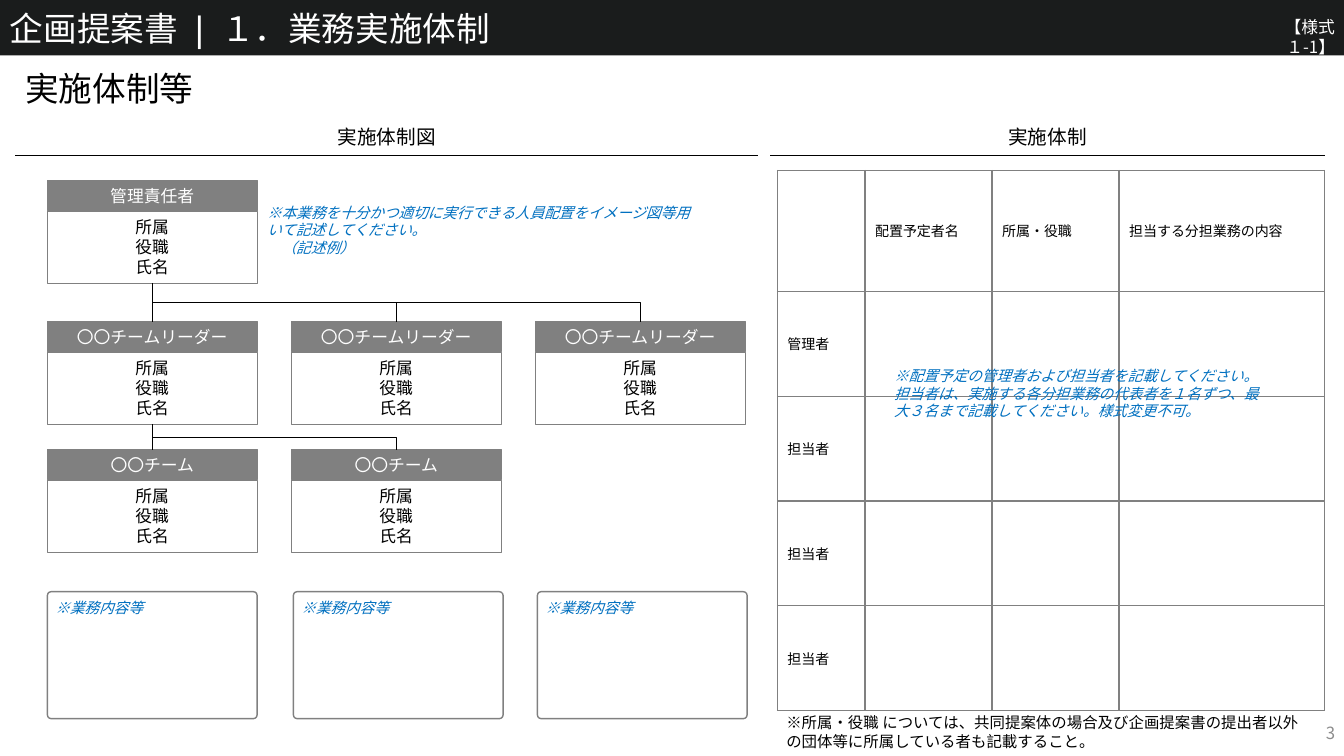
"""Build the project team structure slide of a proposal."""
import pptx
import pptx.util
import pptx.dml.color
import pptx.enum.shapes
import pptx.enum.text
import pptx.oxml.ns
from lxml import etree

Inches, Pt = pptx.util.Inches, pptx.util.Pt
SHAPE = pptx.enum.shapes.MSO_SHAPE
CONNECTOR = pptx.enum.shapes.MSO_CONNECTOR
ALIGN = pptx.enum.text.PP_ALIGN
ANCHOR = pptx.enum.text.MSO_ANCHOR
qn = pptx.oxml.ns.qn

FONT = "Noto Sans CJK JP"
BLACK, WHITE, GRAY, BLUE = "000000", "FFFFFF", "808080", "0070C0"
GUIDE = dict(size=10.5, color=BLUE, italic=True)

BANNER = "企画提案書 ❘ １．業務実施体制"
TITLE = "実施体制等"
FORM_NO = "【様式１-1】"
PAGE_NO = "3"
SECTIONS = [("実施体制図", 0.15, 7.37), ("実施体制", 7.64, 5.5)]
MEMBER = ["所属", "役職", "氏名"]
TEAM_ROWS = [
    (1.79, ["管理責任者"]),
    (3.19, ["〇〇チームリーダー"] * 3),
    (4.46, ["〇〇チーム"] * 2),
]
TASK = "※業務内容等"
TASK_LEFTS = [0.47, 2.91, 5.33]
CHART_GUIDE = ["※本業務を十分かつ適切に実行できる人員配置をイメージ図等用いて記述してください。",
               "　（記述例）"]
TABLE_GUIDE = "※配置予定の管理者および担当者を記載してください。担当者は、実施する各分担業務の代表者を１名ずつ、最大３名まで記載してください。様式変更不可。"
FOOTNOTE = "※所属・役職 については、共同提案体の場合及び企画提案書の提出者以外の団体等に所属している者も記載すること。"
HEADINGS = ["", "配置予定者名", "所属・役職", "担当する分担業務の内容"]
ROLES = ["管理者", "担当者", "担当者", "担当者"]
COL_WIDTHS = [0.87, 1.26, 1.26, 2.04]
ROW_HEIGHTS = [1.2] + [1.04] * 4

CARD_LEFT, CARD_STEP, CARD_W = 0.47, 2.42, 2.08
HEAD_H, BODY_DROP, BODY_H = 0.3, 0.31, 0.71


def rgb(value):
    return pptx.dml.color.RGBColor.from_string(value)


def write(tf, text, size=12, color=BLACK, italic=False, align=ALIGN.LEFT, anchor=ANCHOR.TOP):
    tf.word_wrap = True
    tf.vertical_anchor = anchor
    lines = [text] if isinstance(text, str) else text
    for i, line in enumerate(lines):
        p = tf.paragraphs[0] if i == 0 else tf.add_paragraph()
        p.alignment = align
        r = p.add_run()
        r.text = line
        r.font.size, r.font.italic = Pt(size), italic
        r.font.color.rgb = rgb(color)
        r.font.name = FONT
        etree.SubElement(r.font._element, qn("a:ea"), typeface=FONT)


def add_text(s, text, x, y, w, h, **fmt):
    write(s.shapes.add_textbox(Inches(x), Inches(y), Inches(w), Inches(h)).text_frame, text, **fmt)


def add_box(s, x, y, w, h, fill=None, line=None, width=0.75, kind=SHAPE.RECTANGLE):
    sp = s.shapes.add_shape(kind, Inches(x), Inches(y), Inches(w), Inches(h))
    sp.shadow.inherit = False
    if fill:
        sp.fill.solid()
        sp.fill.fore_color.rgb = rgb(fill)
    else:
        sp.fill.background()
    if line:
        sp.line.color.rgb = rgb(line)
        sp.line.width = Pt(width)
    else:
        sp.line.fill.background()
    return sp


def add_line(s, x1, y1, x2, y2, kind=CONNECTOR.STRAIGHT):
    cxn = s.shapes.add_connector(kind, x1, y1, x2, y2)
    cxn.line.color.rgb = rgb(BLACK)
    cxn.line.width = Pt(0.5)
    etree.SubElement(cxn._element.spPr, qn("a:effectLst"))
    return cxn


def join(s, parent, child):
    x1, y1 = parent.left + parent.width // 2, parent.top + parent.height
    x2, y2 = child.left + child.width // 2, child.top
    run, drop = x2 - x1, y2 - y1
    cxn = add_line(s, x1, y1, x2, y2, CONNECTOR.ELBOW if run else CONNECTOR.STRAIGHT)
    cxn.begin_connect(parent, 2)
    cxn.end_connect(child, 0)
    if run:
        cxn.left, cxn.top = x1 + (run - drop) // 2, y1 + (drop - run) // 2
        cxn.width, cxn.height = drop, run
        xfrm = cxn._element.spPr.find(qn("a:xfrm"))
        xfrm.set("rot", "16200000")
        xfrm.set("flipH", "1")


def add_card(s, heading, x, y):
    head = add_box(s, x, y, CARD_W, HEAD_H, GRAY, GRAY)
    write(head.text_frame, heading, color=WHITE, align=ALIGN.CENTER, anchor=ANCHOR.MIDDLE)
    body = add_box(s, x, y + BODY_DROP, CARD_W, BODY_H, line=GRAY)
    write(body.text_frame, MEMBER, align=ALIGN.CENTER)
    return head, body


def add_staff_table(s):
    rows = [HEADINGS] + [[role, "", "", ""] for role in ROLES]
    table = s.shapes.add_table(len(rows), len(HEADINGS), Inches(7.71), Inches(1.69),
                               Inches(sum(COL_WIDTHS)), Inches(sum(ROW_HEIGHTS))).table
    table.first_row = table.horz_banding = False
    for col, w in zip(table.columns, COL_WIDTHS):
        col.width = Inches(w)
    for row, h, texts in zip(table.rows, ROW_HEIGHTS, rows):
        row.height = Inches(h)
        for cell, text in zip(row.cells, texts):
            cell.vertical_anchor = ANCHOR.MIDDLE
            tcPr = cell._tc.get_or_add_tcPr()
            for side in ("a:lnL", "a:lnR", "a:lnT", "a:lnB"):
                ln = etree.SubElement(tcPr, qn(side), w=str(Pt(1)))
                fill = etree.SubElement(ln, qn("a:solidFill"))
                etree.SubElement(fill, qn("a:srgbClr"), val=GRAY)
            cell.fill.solid()
            cell.fill.fore_color.rgb = rgb(WHITE)
            if text:
                write(cell.text_frame, text, size=10, anchor=ANCHOR.MIDDLE)


def main():
    prs = pptx.Presentation()
    prs.slide_width, prs.slide_height = Inches(13.33), Inches(7.5)
    s = prs.slides.add_slide(prs.slide_layouts[5])

    title = s.shapes.title
    title.left, title.top = Inches(0.15), Inches(0.62)
    title.width, title.height = Inches(13.18), Inches(0.5)
    write(title.text_frame, TITLE, size=24)

    add_staff_table(s)
    banner = add_box(s, 0, 0, 13.33, 0.55, "1A1C1C")
    write(banner.text_frame, BANNER, size=24, color=WHITE, anchor=ANCHOR.MIDDLE)
    add_text(s, PAGE_NO, 10.9, 7.07, 2.44, 0.4, color="8C8C8C", align=ALIGN.RIGHT,
             anchor=ANCHOR.MIDDLE)
    add_text(s, FORM_NO, 12.28, 0.12, 1.06, 0.3, color=WHITE, align=ALIGN.RIGHT)

    for heading, x, w in SECTIONS:
        add_text(s, heading, x, 1.19, w, 0.34, size=14, align=ALIGN.CENTER)
        add_line(s, Inches(x), Inches(1.54), Inches(x + w), Inches(1.54))

    parent = None
    for y, headings in TEAM_ROWS:
        cards = [add_card(s, heading, CARD_LEFT + i * CARD_STEP, y)
                 for i, heading in enumerate(headings)]
        if parent:
            for head, body in cards:
                join(s, parent, head)
        parent = cards[0][1]

    for x in TASK_LEFTS:
        frame = add_box(s, x, 5.87, CARD_W, 1.26, line=GRAY, width=1, kind=SHAPE.ROUNDED_RECTANGLE)
        frame.adjustments[0] = 0.03
        add_text(s, TASK, x - 0.02, 5.89, CARD_W, 0.29, **GUIDE)

    add_text(s, CHART_GUIDE, 2.55, 1.97, 4.52, 0.63, **GUIDE)
    add_text(s, TABLE_GUIDE, 8.77, 3.59, 3.94, 0.63, **GUIDE)
    add_text(s, FOOTNOTE, 7.7, 7.03, 5.42, 0.47, size=11)
    prs.save("out.pptx")


if __name__ == "__main__":
    main()
